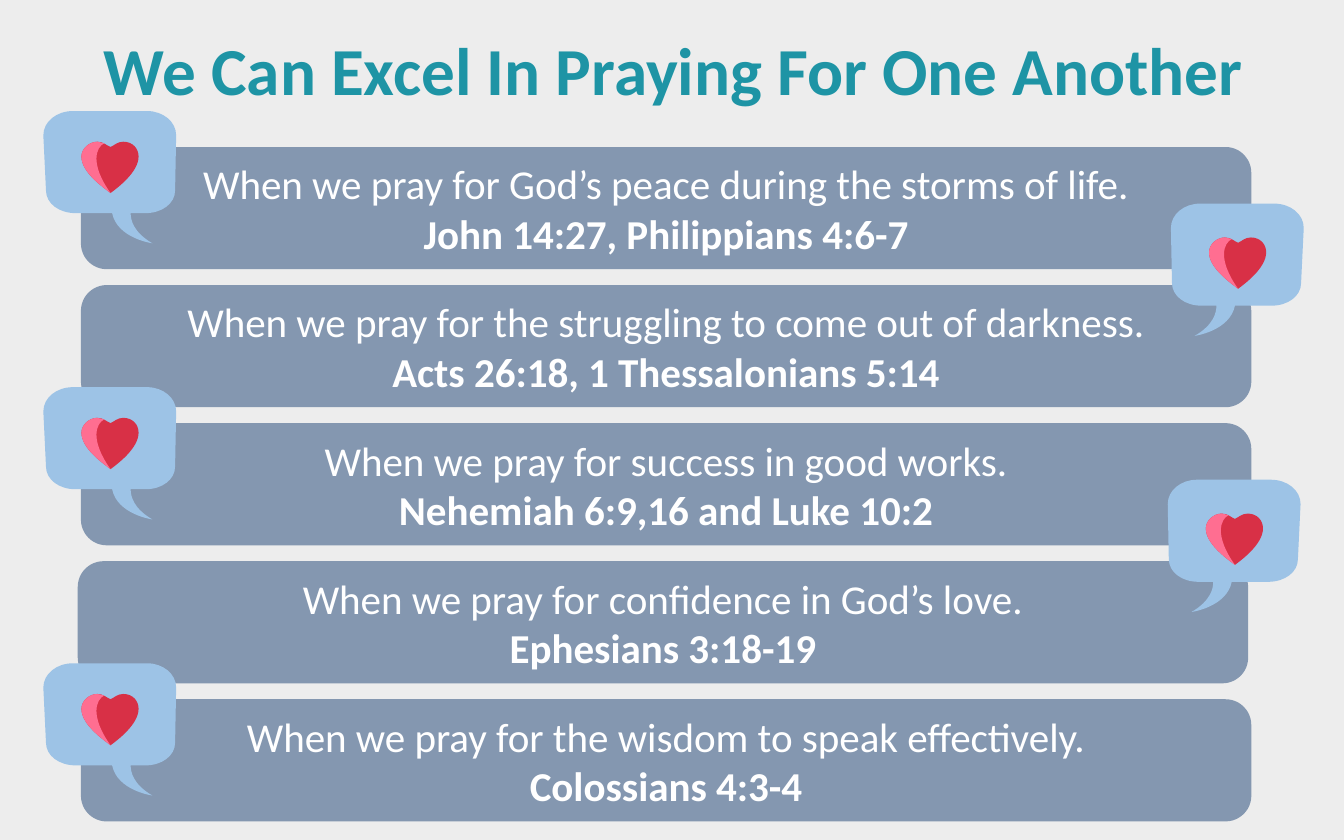
from lxml import etree
from pptx import Presentation
from pptx.dml.color import RGBColor
from pptx.enum import shapes, text
from pptx.oxml.ns import qn
from pptx.util import Cm, Pt

# Outlines in cm: a start point, then lines (x, y) and cubic curves (x1, y1, x2, y2, x, y)
BUBBLE = [(1.96, 0), (2.26, 0, 2.51, 0.2, 2.51, 0.46), (2.49, 1.5),
          (2.49, 1.75, 2.24, 1.93, 1.93, 1.93), (1.65, 1.93),
          (1.65, 2.06, 1.7, 2.29, 2.06, 2.5), (2.06, 2.5, 1.4, 2.41, 1.3, 1.93),
          (0.61, 1.93), (0.3, 1.93, 0.05, 1.75, 0.05, 1.5), (0, 0.46),
          (0, 0.2, 0.25, 0, 0.56, 0)]
HEART_LEFT_SIDE = [(0.3, 0), (0.15, 0, 0, 0.13, 0, 0.28), (0, 0.58, 0.41, 0.86, 0.55, 0.97)]
HEART = HEART_LEFT_SIDE + [(0.67, 0.88, 1.08, 0.58, 1.08, 0.28), (1.08, 0.13, 0.97, 0, 0.79, 0),
                           (0.68, 0, 0.62, 0.07, 0.55, 0.1), (0.47, 0.07, 0.42, 0, 0.3, 0)]
HEART_SHADE = HEART_LEFT_SIDE + [(0.15, 0.41, 0.28, 0.1, 0.43, 0.03),
                                 (0.38, 0.03, 0.36, 0, 0.3, 0)]
BUBBLE_WIDTH = 2.51

PRAYERS = [
    ("When we pray for God’s peace during the storms of life.", "John 14:27, Philippians 4:6-7"),
    ("When we pray for the struggling to come out of darkness.", "Acts 26:18, 1 Thessalonians 5:14"),
    ("When we pray for success in good works.", "Nehemiah 6:9,16 and Luke 10:2"),
    ("When we pray for confidence in God’s love.", "Ephesians 3:18-19"),
    ("When we pray for the wisdom to speak effectively.", "Colossians 4:3-4"),
]
CARD_LEFTS = [1.53, 1.53, 1.53, 1.47, 1.53]
CARD_TOP, CARD_PITCH = 2.78, 2.61
CARD_WIDTH, CARD_HEIGHT = 22.12, 2.31


def color(hex_code):
    return RGBColor.from_string(hex_code)


def paint(part, fill):
    part.shadow.inherit = False
    part.fill.solid()
    part.fill.fore_color.rgb = color(fill)
    part.line.fill.background()
    return part


def write(paragraph, words, size=22, bold=False, fill="FFFFFF"):
    paragraph.alignment = text.PP_ALIGN.CENTER
    run = paragraph.add_run()
    run.text = words
    run.font.name = "Calibri"
    run.font.size = Pt(size)
    run.font.bold = bold
    run.font.color.rgb = color(fill)


def draw_outline(slide, outline, left, top, fill, mirror_width=None):
    # One drawing unit is a hundredth of a centimetre
    points = []
    for segment in outline:
        for x, y in zip(segment[::2], segment[1::2]):
            x = x if mirror_width is None else mirror_width - x
            points.append((round(x * 100), round(y * 100)))
    builder = slide.shapes.build_freeform(*points[0], scale=Cm(0.01))
    builder.add_line_segments(points[1:], close=True)
    outline_shape = builder.convert_to_shape(Cm(left), Cm(top))

    # Join each curve's three points into one cubic segment
    lines = iter(list(outline_shape.element.iter(qn("a:lnTo"))))
    for segment in outline[1:]:
        line = next(lines)
        if len(segment) == 6:
            curve = etree.Element(qn("a:cubicBezTo"))
            line.addprevious(curve)
            for corner in (line, next(lines), next(lines)):
                curve.append(corner[0])
                corner.getparent().remove(corner)
    return paint(outline_shape, fill)


def add_title(slide, left, top, width, height):
    frame = slide.shapes.add_textbox(Cm(left), Cm(top), Cm(width), Cm(height)).text_frame
    frame.word_wrap = True
    frame.vertical_anchor = text.MSO_ANCHOR.MIDDLE
    frame.paragraphs[0].line_spacing = 0.9
    write(frame.paragraphs[0], "We Can Excel In Praying For One Another",
          size=36, bold=True, fill="1E94A5")


def add_heart_bubble(slide, left, top, on_right):
    heart_left, heart_top = left + 0.72, top + (0.64 if on_right else 0.58)
    draw_outline(slide, BUBBLE, left, top, "9DC3E6", BUBBLE_WIDTH if on_right else None)
    draw_outline(slide, HEART, heart_left, heart_top, "D83046")
    draw_outline(slide, HEART_SHADE, heart_left, heart_top, "FF6E91")


def add_prayer(slide, left, top, width, height, prayer, verses, on_right):
    # Card with the prayer and its verses
    card = paint(slide.shapes.add_shape(shapes.MSO_SHAPE.ROUNDED_RECTANGLE,
                                        Cm(left), Cm(top), Cm(width), Cm(height)), "8497B0")
    card.adjustments[0] = 0.211
    frame = card.text_frame
    frame.word_wrap = True
    frame.vertical_anchor = text.MSO_ANCHOR.MIDDLE
    frame.margin_left = frame.margin_right = frame.margin_top = frame.margin_bottom = Cm(0.25)
    paragraph = frame.paragraphs[0]
    write(paragraph, prayer)
    paragraph.add_line_break()
    write(paragraph, verses, bold=True)

    # Speech bubble over one end of the card
    if on_right:
        add_heart_bubble(slide, left + width - 1.52, top - 1.54, on_right)
    else:
        add_heart_bubble(slide, left - 0.71, top - 0.68, on_right)


def main():
    deck = Presentation()
    deck.slide_width, deck.slide_height = Cm(25.4), Cm(15.88)
    slide = deck.slides.add_slide(deck.slide_layouts[6])
    slide.background.fill.solid()
    slide.background.fill.fore_color.rgb = color("EDEDED")

    add_title(slide, 0.53, 0.43, 24.41, 1.93)
    for row, ((prayer, verses), left) in enumerate(zip(PRAYERS, CARD_LEFTS)):
        add_prayer(slide, left, CARD_TOP + row * CARD_PITCH, CARD_WIDTH, CARD_HEIGHT,
                   prayer, verses, on_right=row % 2 == 1)
    deck.save("out.pptx")


if __name__ == "__main__":
    main()
